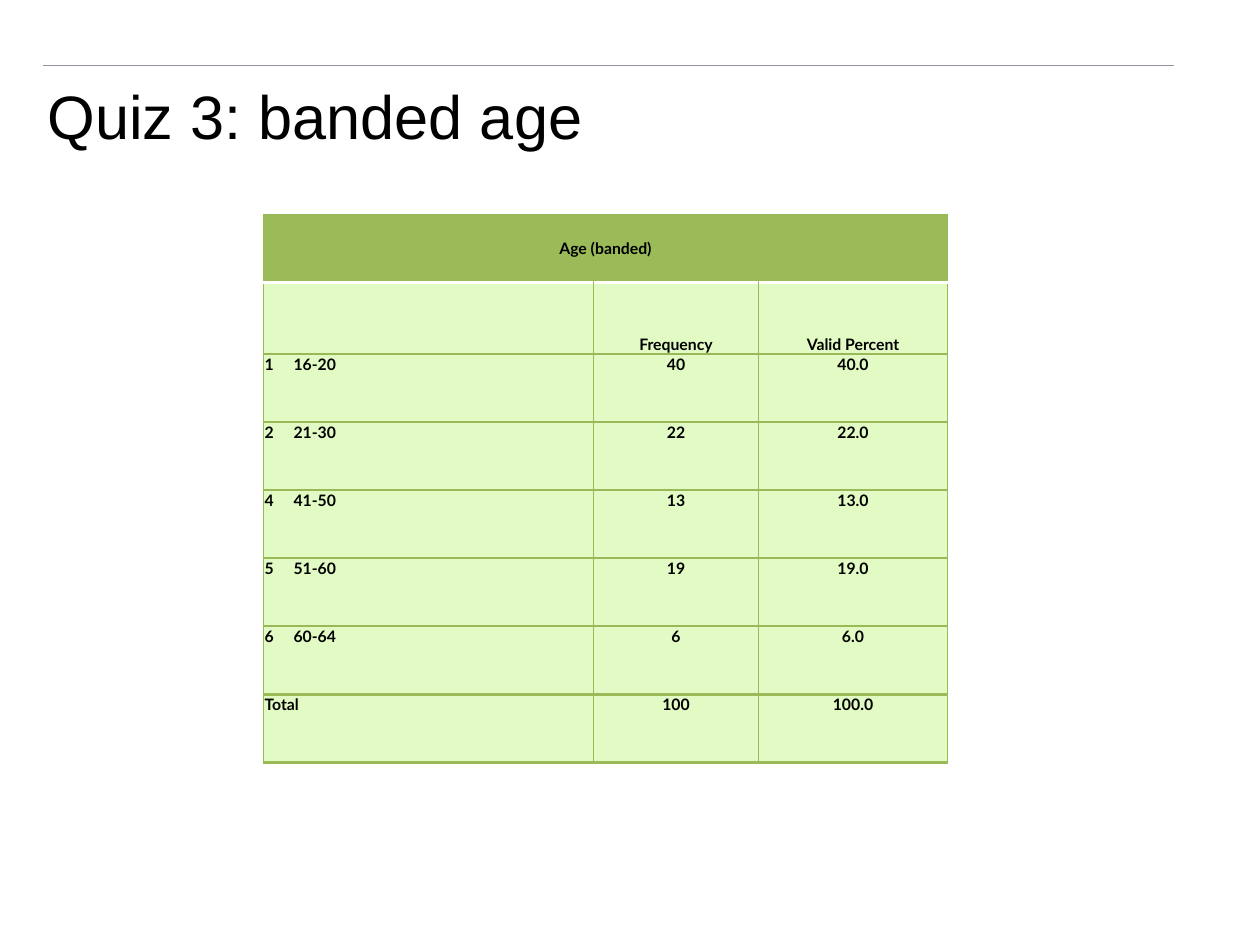
"""Build the banded age slide: a title under a rule and a frequency table."""
from lxml import etree
from pptx import Presentation
from pptx import util as u
from pptx.dml.color import RGBColor
from pptx.enum import shapes, text
from pptx.oxml import ns

BLACK = RGBColor(0x00, 0x00, 0x00)
WHITE = RGBColor(0xFF, 0xFF, 0xFF)
GREY = RGBColor(0x8E, 0x95, 0x9C)
HEADER_GREEN = RGBColor(0x9B, 0xBB, 0x59)
GRID_GREEN = RGBColor(0x98, 0xB9, 0x55)
BODY_GREEN = RGBColor(0xE2, 0xFA, 0xC3)

COLUMN_WIDTHS = [2.62, 1.31, 1.5]
ROW_HEIGHTS = [0.54, 0.57] + [0.54] * 6
ROWS = [
    ["Age (banded)", "", ""],
    ["", "Frequency", "Valid Percent"],
    ["1\t16-20", "40", "40.0"],
    ["2\t21-30", "22", "22.0"],
    ["4\t41-50", "13", "13.0"],
    ["5\t51-60", "19", "19.0"],
    ["6\t60-64", "6", "6.0"],
    ["Total", "100", "100.0"],
]
LAST = len(ROWS) - 1
THIN = (GRID_GREEN, 0.75)
THICK = (HEADER_GREEN, 2)
UNDER_HEADER = (WHITE, 2)


def add_border(cell, side, color, width):
    properties = cell._tc.get_or_add_tcPr()
    line = etree.SubElement(properties, ns.qn(f"a:ln{side}"), w=str(u.Pt(width)))
    fill = etree.SubElement(line, ns.qn("a:solidFill"))
    etree.SubElement(fill, ns.qn("a:srgbClr"), val=str(color))


def style_run(run, font, size, bold=False):
    run.font.name = font
    run.font.size = u.Pt(size)
    run.font.bold = bold
    run.font.color.rgb = BLACK


deck = Presentation()
deck.slide_width, deck.slide_height = u.Inches(10), u.Inches(7.5)
slide = deck.slides.add_slide(deck.slide_layouts[6])

rule = slide.shapes.add_connector(
    shapes.MSO_CONNECTOR.STRAIGHT,
    u.Inches(0.34), u.Inches(0.52), u.Inches(9.32), u.Inches(0.52))
rule.line.color.rgb = GREY
rule.line.width = u.Pt(0.75)
etree.SubElement(rule._element.spPr, ns.qn("a:effectLst"))

title = slide.shapes.add_textbox(
    u.Inches(0.28), u.Inches(0.29), u.Inches(9), u.Inches(1.25)).text_frame
title.word_wrap = True
title.vertical_anchor = text.MSO_ANCHOR.MIDDLE
title.text = "Quiz 3: banded age"
style_run(title.paragraphs[0].runs[0], "Arial", 35)

ages = slide.shapes.add_table(
    len(ROWS), len(COLUMN_WIDTHS), u.Inches(2.09), u.Inches(1.7),
    u.Inches(sum(COLUMN_WIDTHS)), u.Inches(sum(ROW_HEIGHTS))).table
ages.horz_banding = False
for column, width in zip(ages.columns, COLUMN_WIDTHS):
    column.width = u.Inches(width)
for row, height in zip(ages.rows, ROW_HEIGHTS):
    row.height = u.Inches(height)
ages.cell(0, 0).merge(ages.cell(0, 2))

anchors = {0: text.MSO_ANCHOR.MIDDLE, 1: text.MSO_ANCHOR.BOTTOM}
tops = {1: UNDER_HEADER, LAST: THICK}
bottoms = {0: UNDER_HEADER, LAST - 1: THICK, LAST: THICK}
for r, values in enumerate(ROWS):
    for c, value in enumerate(values):
        cell = ages.cell(r, c)
        cell.margin_left = cell.margin_right = cell.margin_top = u.Inches(0.01)
        cell.margin_bottom = 0
        cell.vertical_anchor = anchors.get(r, text.MSO_ANCHOR.TOP)
        borders = {"L": THIN, "R": THIN,
                   "T": tops.get(r, THIN), "B": bottoms.get(r, THIN)}
        for side, (color, width) in borders.items():
            add_border(cell, side, color, width)
        cell.fill.solid()
        cell.fill.fore_color.rgb = HEADER_GREEN if r == 0 else BODY_GREEN
        if not value:
            continue
        cell.text_frame.text = value
        paragraph = cell.text_frame.paragraphs[0]
        if r == 0 or c > 0:
            paragraph.alignment = text.PP_ALIGN.CENTER
        if "\t" in value:
            stops = etree.SubElement(paragraph._p.get_or_add_pPr(), ns.qn("a:tabLst"))
            etree.SubElement(stops, ns.qn("a:tab"), pos=str(u.Inches(0.23)), algn="l")
        style_run(paragraph.runs[0], "Lato", 9, bold=True)

deck.save("out.pptx")
